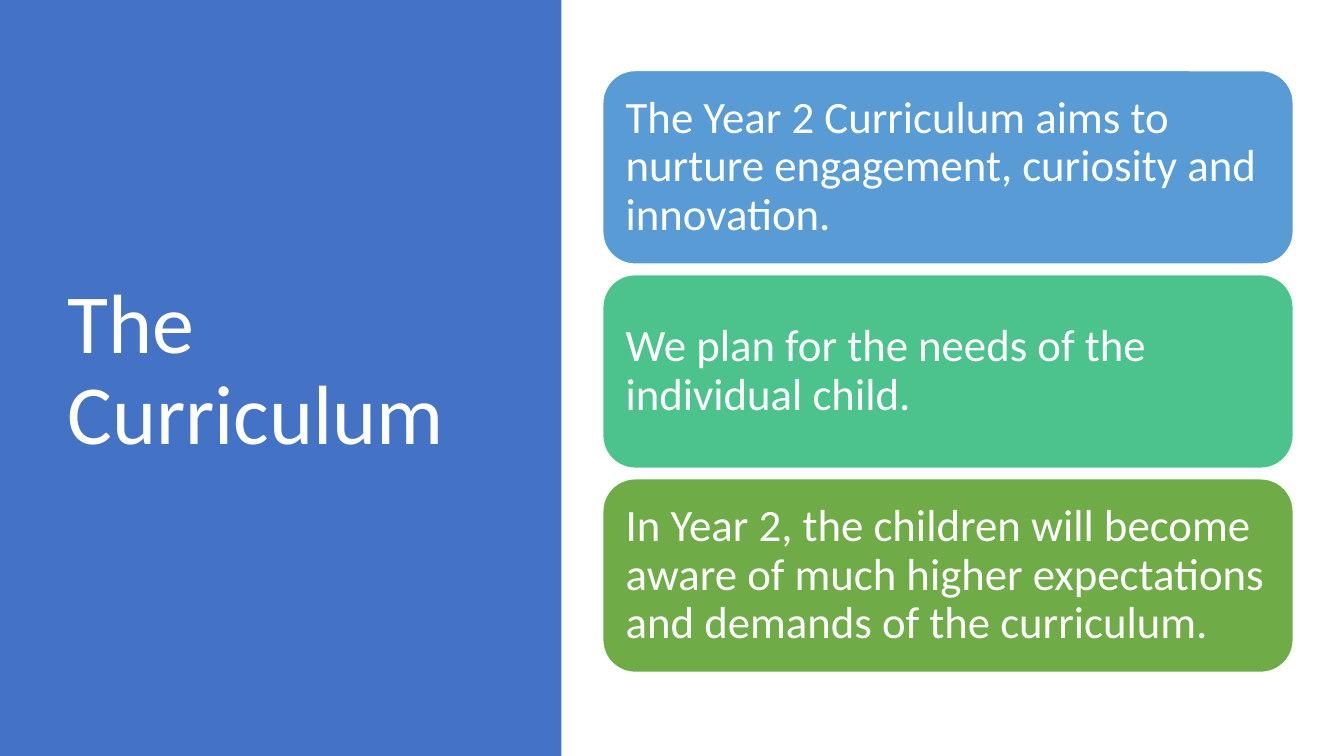
from dataclasses import dataclass

from pptx import Presentation
from pptx.dml.color import RGBColor
from pptx.enum.shapes import MSO_SHAPE as Shape
from pptx.enum.text import MSO_ANCHOR as Anchor, PP_ALIGN as Align
from pptx.shapes.autoshape import Shape as AutoShape
from pptx.util import Emu, Inches, Pt

WHITE = RGBColor(0xFF, 0xFF, 0xFF)
PANEL_BLUE = RGBColor(0x44, 0x72, 0xC4)
SKY = RGBColor(0x59, 0x9B, 0xD5)
MINT = RGBColor(0x4C, 0xC3, 0x8C)
GREEN = RGBColor(0x6F, 0xAB, 0x46)

FONT = "Calibri"
CELL = Inches(1 / 12)  # the slide is 160 columns by 90 rows
COLUMNS, ROWS = 160, 90
CARD_TOP, CARD_HEIGHT, CARD_PITCH = 8.4, 23.04, 24.3


@dataclass(frozen=True)
class Area:
    """A rectangle in grid columns and rows."""
    col: float
    row: float
    cols: float
    rows: float

    def emu(self) -> list[Emu]:
        return [Emu(round(n * CELL)) for n in (self.col, self.row, self.cols, self.rows)]


@dataclass(frozen=True)
class Card:
    text: str
    fill: RGBColor


CARDS = [
    Card("The Year 2 Curriculum aims to nurture engagement, curiosity and innovation.", SKY),
    Card("We plan for the needs of the individual child.", MINT),
    Card("In Year 2, the children will become aware of much higher "
         "expectations and demands of the curriculum.", GREEN),
]


def add_block(s, kind: Shape, area: Area, fill: RGBColor) -> AutoShape:
    """Add a flat filled shape without outline or shadow."""
    sp = s.shapes.add_shape(kind, *area.emu())
    sp.shadow.inherit = False
    sp.fill.solid()
    sp.fill.fore_color.rgb = fill
    sp.line.fill.background()
    return sp


def write(sp: AutoShape, text: str, size: int, inset_x: Pt, inset_y: Pt) -> None:
    tf = sp.text_frame
    tf.word_wrap = True
    tf.vertical_anchor = Anchor.MIDDLE
    tf.margin_left = tf.margin_right = inset_x
    tf.margin_top = tf.margin_bottom = inset_y
    p = tf.paragraphs[0]
    p.alignment = Align.LEFT
    p.line_spacing = 0.9
    r = p.add_run()
    r.text = text
    r.font.name = FONT
    r.font.size = Pt(size)
    r.font.color.rgb = WHITE


def add_card(s, card: Card, index: int) -> None:
    area = Area(71.76, CARD_TOP + index * CARD_PITCH, 82.2, CARD_HEIGHT)
    sp = add_block(s, Shape.ROUNDED_RECTANGLE, area, card.fill)
    sp.adjustments[0] = 1 / 6
    sp.line.color.rgb = WHITE
    sp.line.width = Pt(1)
    write(sp, card.text, 32, Pt(9.6), Pt(9.6))


def main() -> None:
    prs = Presentation()
    prs.slide_width, prs.slide_height = COLUMNS * CELL, ROWS * CELL
    s = prs.slides.add_slide(prs.slide_layouts[6])

    add_block(s, Shape.RECTANGLE, Area(0, 0, 66.84, ROWS), PANEL_BLUE)
    title = s.shapes.add_textbox(*Area(6.84, 8.16, 49.92, 72.24).emu())
    write(title, "The Curriculum", 60, Pt(7.2), Pt(3.6))
    for index, card in enumerate(CARDS):
        add_card(s, card, index)

    prs.save("out.pptx")


if __name__ == "__main__":
    main()
